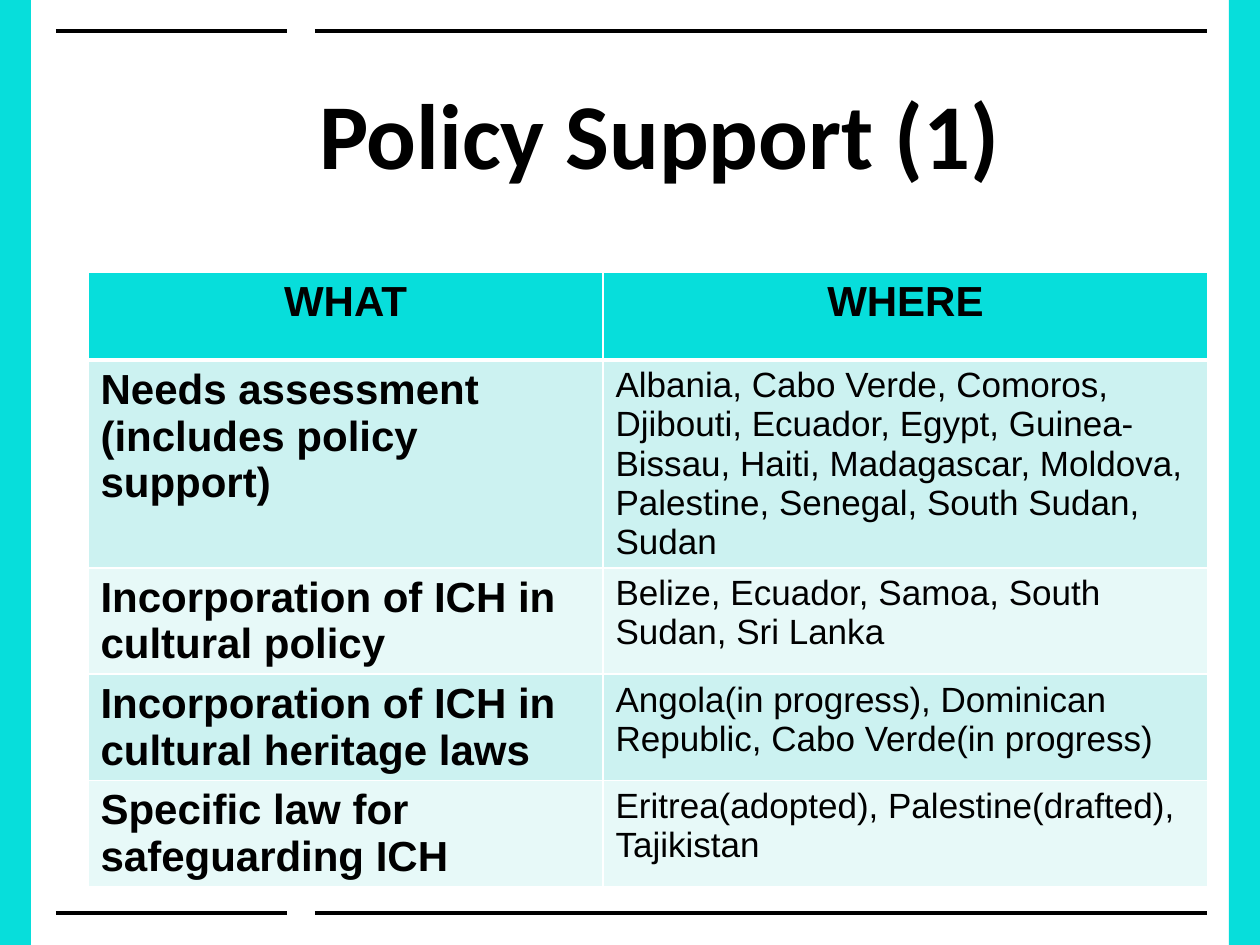
from lxml import etree
from pptx import Presentation
from pptx import util as u
from pptx.dml.color import RGBColor
from pptx.enum import shapes, text
from pptx.oxml import ns

PX = 914400 // 126
TURQUOISE = RGBColor(0x07, 0xDE, 0xDB)
PALE = RGBColor(0xCC, 0xF2, 0xF1)
PALER = RGBColor(0xE7, 0xF9, 0xF8)
BLACK = RGBColor(0, 0, 0)
WHITE = RGBColor(0xFF, 0xFF, 0xFF)

HEADINGS = ("WHAT", "WHERE")
POLICIES = [
    ("Needs assessment (includes policy support)",
     "Albania, Cabo Verde, Comoros, Djibouti, Ecuador, Egypt, Guinea-Bissau, "
     "Haiti, Madagascar, Moldova, Palestine, Senegal, South Sudan, Sudan"),
    ("Incorporation of ICH in cultural policy",
     "Belize, Ecuador, Samoa, South Sudan, Sri Lanka"),
    ("Incorporation of ICH in cultural heritage laws",
     "Angola(in progress), Dominican Republic, Cabo Verde(in progress)"),
    ("Specific law for safeguarding ICH",
     "Eritrea(adopted), Palestine(drafted), Tajikistan"),
]
COLUMN_WIDTHS = (515, 605)
ROW_HEIGHTS = (88, 173, 97, 97, 97)


def px(length):
    return u.Emu(length * PX)


def add_side_band(slide, left):
    band = slide.shapes.add_shape(
        shapes.MSO_SHAPE.RECTANGLE, px(left), 0, px(31), px(945))
    band.shadow.inherit = False
    band.fill.solid()
    band.fill.fore_color.rgb = TURQUOISE
    band.line.fill.background()


def add_rule(slide, start, end, y):
    rule = slide.shapes.add_connector(
        shapes.MSO_CONNECTOR.STRAIGHT, px(start), px(y), px(end), px(y))
    rule.line.color.rgb = BLACK
    rule.line.width = u.Pt(2)
    etree.SubElement(rule._element.spPr, ns.qn("a:effectLst"))


def add_text(paragraph, wording, font_name, size, bold):
    run = paragraph.add_run()
    run.text = wording
    run.font.name = font_name
    run.font.size = u.Pt(size)
    run.font.bold = bold
    run.font.color.rgb = BLACK


def set_title(slide, wording):
    title = slide.shapes.title
    title.left, title.top, title.width, title.height = map(px, (319, 72, 878, 149))
    frame = title.text_frame
    frame.auto_size = text.MSO_AUTO_SIZE.NONE
    frame.word_wrap = True
    frame.vertical_anchor = text.MSO_ANCHOR.TOP
    frame.margin_left = frame.margin_right = frame.margin_bottom = 0
    frame.margin_top = px(5)
    heading = frame.paragraphs[0]
    heading.alignment = text.PP_ALIGN.LEFT
    heading.line_spacing = 1.0
    add_text(heading, wording, "Calibri", 53, True)


def add_borders(cell, row):
    properties = cell._tc.get_or_add_tcPr()
    widths = {"L": 1, "R": 1, "T": 3 if row == 1 else 1, "B": 3 if row == 0 else 1}
    for side, width in widths.items():
        border = etree.SubElement(
            properties, ns.qn(f"a:ln{side}"), w=str(u.Pt(width)))
        fill = etree.SubElement(border, ns.qn("a:solidFill"))
        etree.SubElement(fill, ns.qn("a:srgbClr"), val=str(WHITE))


def fill_cell(cell, wording, row, column):
    add_borders(cell, row)
    cell.fill.solid()
    cell.fill.fore_color.rgb = TURQUOISE if row == 0 else PALE if row % 2 else PALER
    cell.margin_left = cell.margin_right = u.Inches(0.1)
    cell.margin_top = cell.margin_bottom = u.Inches(0.05)
    cell.vertical_anchor = text.MSO_ANCHOR.TOP
    paragraph = cell.text_frame.paragraphs[0]
    paragraph.alignment = text.PP_ALIGN.CENTER if row == 0 else text.PP_ALIGN.LEFT
    emphasised = row == 0 or column == 0
    add_text(paragraph, wording, "Arial", 24 if emphasised else 20, emphasised)


def add_policy_table(slide):
    rows = [HEADINGS, *POLICIES]
    table = slide.shapes.add_table(
        len(rows), len(HEADINGS), px(88), px(272),
        px(sum(COLUMN_WIDTHS)), px(sum(ROW_HEIGHTS))).table
    for column, width in zip(table.columns, COLUMN_WIDTHS):
        column.width = px(width)
    for row, height in zip(table.rows, ROW_HEIGHTS):
        row.height = px(height)
    for r, entries in enumerate(rows):
        for c, wording in enumerate(entries):
            fill_cell(table.cell(r, c), wording, r, c)


def main():
    deck = Presentation()
    deck.slide_width, deck.slide_height = px(1260), px(945)
    slide = deck.slides.add_slide(deck.slide_layouts[5])
    for left in (0, 1229):
        add_side_band(slide, left)
    for y in (31, 913):
        add_rule(slide, 56, 287, y)
        add_rule(slide, 315, 1207, y)
    set_title(slide, "Policy Support (1)")
    add_policy_table(slide)
    deck.save("out.pptx")


if __name__ == "__main__":
    main()
